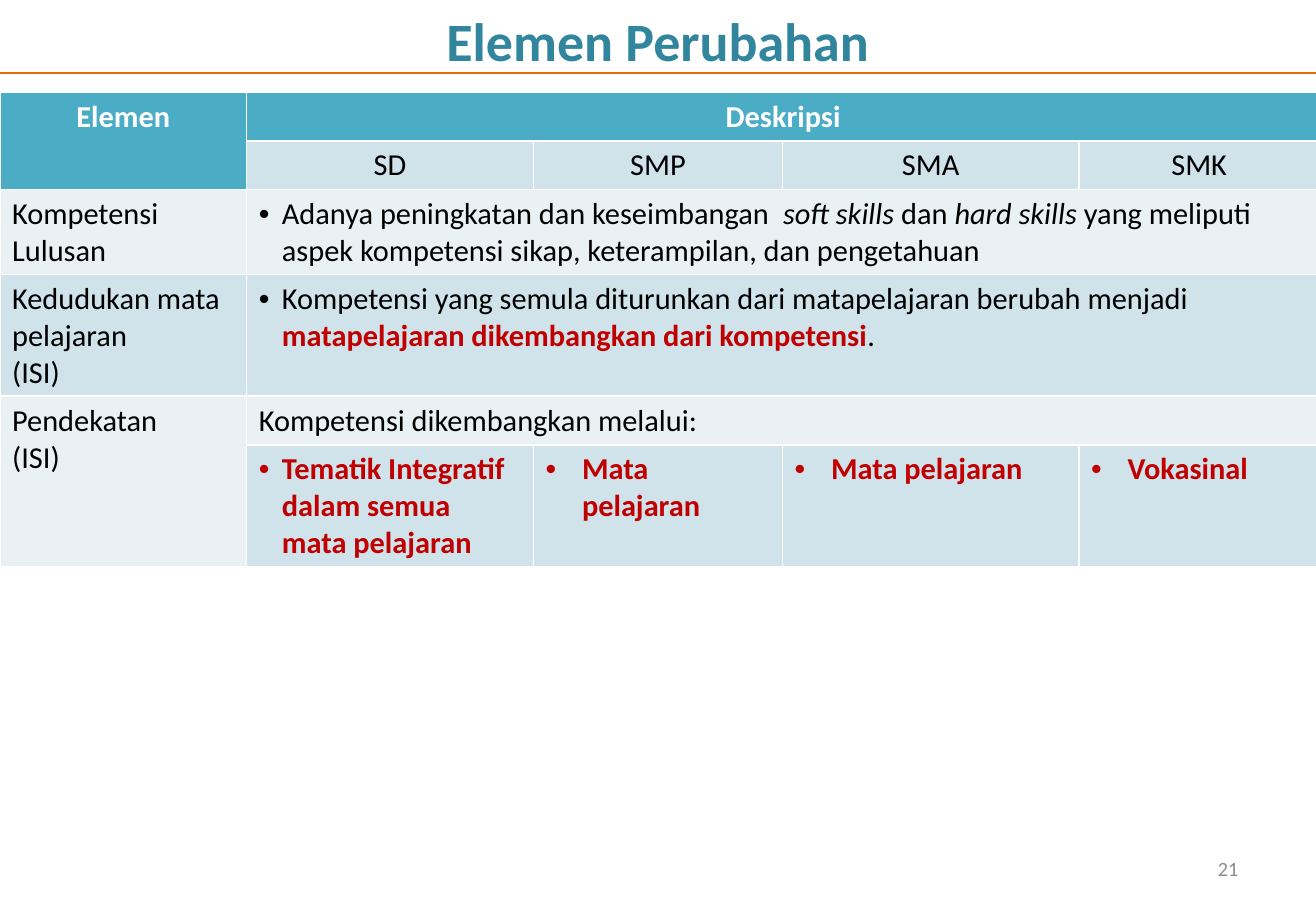
import pptx
import pptx.dml.color
import pptx.enum.shapes
import pptx.enum.text
import pptx.oxml
import pptx.oxml.ns
import pptx.util
from lxml import etree

Inches = pptx.util.Inches
Pt = pptx.util.Pt
Align = pptx.enum.text.PP_ALIGN
FONT = "Calibri"
COLORS = {
    "title": "31859C", "header": "4BACC6", "dark_band": "D0E3EA",
    "light_band": "E9F1F5", "white": "FFFFFF", "black": "000000",
    "red": "C00000", "gray": "8C8C8C", "rule": "E46C0A",
}
COLUMN_WIDTHS = [2.03, 2.36, 2.05, 2.44, 1.98]
ROW_HEIGHTS = [0.27, 0.27, 0.42, 0.78, 0.25, 0.85]


def rgb(name):
    return pptx.dml.color.RGBColor.from_string(COLORS[name])


def add_span(para, text, size=18, color="black", bold=False, italic=False):
    span = para.add_run()
    span.text = text
    span.font.name = FONT
    span.font.size = Pt(size)
    span.font.color.rgb = rgb(color)
    span.font.bold = bold
    span.font.italic = italic


def add_text(page, place, text, align, **style):
    box = page.shapes.add_textbox(*map(Inches, place))
    frame = box.text_frame
    frame.word_wrap = True
    frame.vertical_anchor = pptx.enum.text.MSO_ANCHOR.MIDDLE
    para = frame.paragraphs[0]
    para.alignment = align
    add_span(para, text, **style)


def add_rule(page, left, right, height):
    line = page.shapes.add_connector(
        pptx.enum.shapes.MSO_CONNECTOR.STRAIGHT,
        Inches(left), Inches(height), Inches(right), Inches(height))
    line.line.color.rgb = rgb("rule")
    line.line.width = Pt(0.75)
    etree.SubElement(line._element.spPr, pptx.oxml.ns.qn("a:effectLst"))


def set_borders(cell):
    properties = cell._tc.get_or_add_tcPr()
    for side in ("lnL", "lnR", "lnT", "lnB"):
        properties.append(pptx.oxml.parse_xml(
            f'<a:{side} {pptx.oxml.ns.nsdecls("a")} w="12700"><a:solidFill>'
            f'<a:srgbClr val="{COLORS["white"]}"/></a:solidFill></a:{side}>'))


def fill_cell(cell, fill, paragraphs, align=Align.LEFT, indent=0, bullet=False, before=0):
    """Each paragraph is a list of (text, style) spans."""
    cell.fill.solid()
    cell.fill.fore_color.rgb = rgb(fill)
    for number, spans in enumerate(paragraphs):
        frame = cell.text_frame
        para = frame.add_paragraph() if number else frame.paragraphs[0]
        para.alignment = align
        para.space_before = Pt(before)
        properties = para._p.get_or_add_pPr()
        properties.set("marL", str(Inches(indent)))
        properties.set("indent", str(-Inches(indent)))
        if bullet:
            for tag, key, value in (("a:buFont", "typeface", "Arial"),
                                    ("a:buChar", "char", "•")):
                etree.SubElement(properties, pptx.oxml.ns.qn(tag)).set(key, value)
        for text, style in spans:
            add_span(para, text, **style)


def add_changes_table(page):
    table = page.shapes.add_table(
        len(ROW_HEIGHTS), len(COLUMN_WIDTHS),
        Inches(0), Inches(0.76), Inches(10.86), Inches(3.9)).table
    table.first_row = table.horz_banding = False
    for column, width in zip(table.columns, COLUMN_WIDTHS):
        column.width = Inches(width)
    for row, height in zip(table.rows, ROW_HEIGHTS):
        row.height = Inches(height)
    for cell in table.iter_cells():
        set_borders(cell)

    # Merged areas
    for top in (0, 4):
        table.cell(top, 0).merge(table.cell(top + 1, 0))
    for row in (0, 2, 3, 4):
        table.cell(row, 1).merge(table.cell(row, 4))

    # Header
    header = {"color": "white", "bold": True}
    for column, text in enumerate(("Elemen", "Deskripsi")):
        fill_cell(table.cell(0, column), "header", [[(text, header)]], Align.CENTER)
    for column, level in enumerate(("SD", "SMP", "SMA", "SMK"), 1):
        fill_cell(table.cell(1, column), "dark_band", [[(level, {})]],
                  Align.CENTER, indent=0.3)

    # Elements
    elements = [
        (2, "light_band", ["Kompetensi Lulusan"]),
        (3, "dark_band", ["Kedudukan mata pelajaran", "(ISI)"]),
        (4, "light_band", ["Pendekatan", "(ISI)"]),
    ]
    for row, fill, lines in elements:
        fill_cell(table.cell(row, 0), fill, [[(text, {})] for text in lines])

    # Descriptions across all levels
    italic = {"italic": True}
    strong = {"color": "red", "bold": True}
    fill_cell(table.cell(2, 1), "light_band", [[
        ("Adanya peningkatan dan keseimbangan ", {}),
        (" soft skills", italic), (" dan ", {}), ("hard skills", italic),
        (" yang meliputi aspek kompetensi sikap, keterampilan, dan pengetahuan", {}),
    ]], indent=0.19, bullet=True, before=2)
    fill_cell(table.cell(3, 1), "dark_band", [[
        ("Kompetensi yang semula diturunkan dari matapelajaran berubah menjadi ", {}),
        ("matapelajaran dikembangkan dari kompetensi", strong), (".", {}),
    ]], indent=0.19, bullet=True, before=2)
    fill_cell(table.cell(4, 1), "light_band",
              [[("Kompetensi dikembangkan melalui:", {})]], before=2)

    # Approach for each level
    approaches = [
        ("Tematik Integratif dalam semua mata pelajaran", 0.19, 2),
        ("Mata pelajaran", 0.3, 0),
        ("Mata pelajaran", 0.3, 0),
        ("Vokasinal", 0.3, 2),
    ]
    for column, (text, indent, before) in enumerate(approaches, 1):
        fill_cell(table.cell(5, column), "dark_band", [[(text, strong)]],
                  indent=indent, bullet=True, before=before)


def main():
    deck = pptx.Presentation()
    deck.slide_width, deck.slide_height = Inches(10.83), Inches(7.5)
    page = deck.slides.add_slide(deck.slide_layouts[6])

    add_text(page, (0, -0.03, 10.83, 0.71), "Elemen Perubahan", Align.CENTER,
             size=32, color="title", bold=True)
    add_changes_table(page)
    add_text(page, (7.76, 6.95, 2.53, 0.4), "21", Align.RIGHT, size=12, color="gray")
    add_rule(page, 0, 10.83, 0.6)
    deck.save("out.pptx")


if __name__ == "__main__":
    main()
